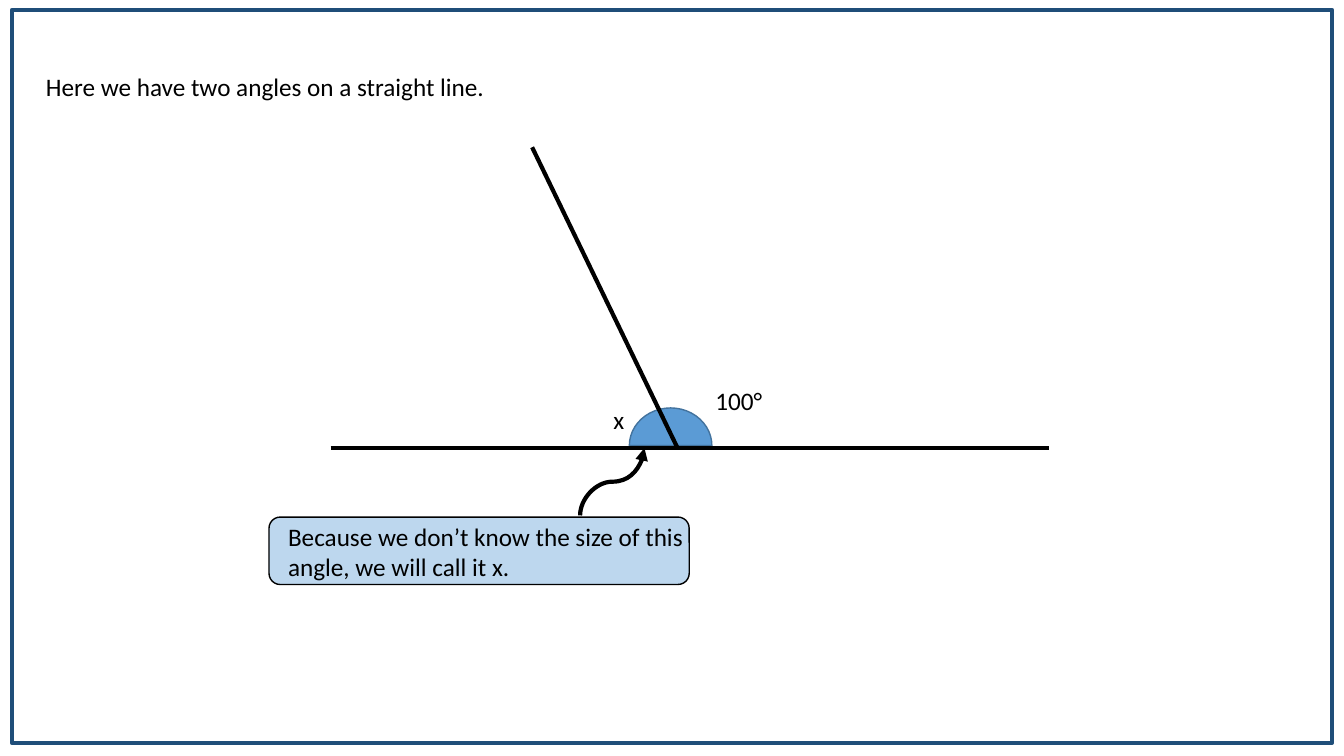
from lxml import etree
from pptx import Presentation
from pptx.dml.color import RGBColor
from pptx.enum.shapes import MSO_CONNECTOR as Link, MSO_SHAPE as Shape
from pptx.oxml.ns import qn
from pptx.util import Cm, Pt


def paint(target, color):
    """Give a fill, or the fill of a line, one solid colour."""
    target.solid()
    target.fore_color.rgb = RGBColor.from_string(color)


def add_label(shapes, text, left, top, width, height, wrap=False):
    box = shapes.add_textbox(Cm(left), Cm(top), Cm(width), Cm(height))
    box.text_frame.word_wrap = wrap
    span = box.text_frame.paragraphs[0].add_run()
    span.text = text
    span.font.name = "Calibri"
    span.font.size = Pt(18)
    paint(span.font.fill, "000000")


deck = Presentation()
deck.slide_width, deck.slide_height = Cm(33.87), Cm(19.05)
page = deck.slides.add_slide(deck.slide_layouts[6])
shapes = page.shapes

# Frame, angle marker and callout box
frame = shapes.add_shape(Shape.RECTANGLE, Cm(0.3), Cm(0.25), Cm(33.27), Cm(18.47))
marker = shapes.add_shape(Shape.PIE, Cm(15.95), Cm(10.19), Cm(1.9), Cm(2.08))
marker.rotation = 90
marker.adjustments[0], marker.adjustments[1] = 54, 162
callout = shapes.add_group_shape()
callout_box = callout.shapes.add_shape(
    Shape.ROUNDED_RECTANGLE, Cm(6.78), Cm(13.03), Cm(10.59), Cm(1.7))
add_label(callout.shapes, "Because we don’t know the size of this angle, we will call it x.",
          7.01, 13, 10.77, 1.8, wrap=True)

for shape, fill, line, weight in [
    (frame, None, "1F4E79", 3),
    (marker, "5B9BD5", "43739E", 1),
    (callout_box, "BDD7EE", "000000", 1),
]:
    shape.shadow.inherit = False
    if fill:
        paint(shape.fill, fill)
    else:
        shape.fill.background()
    paint(shape.line.fill, line)
    shape.line.width = Pt(weight)

# Straight line, slanted ray and curved arrow
vertex_y = 11.28
strokes = []
for kind, x1, y1, x2, y2 in [
    (Link.STRAIGHT, 8.33, vertex_y, 26.44, vertex_y),
    (Link.STRAIGHT, 13.41, 3.71, 17.07, vertex_y),
    (Link.CURVE, 16.28, 12.95, 14.58, 11.33),
]:
    stroke = shapes.add_connector(kind, Cm(x1), Cm(y1), Cm(x2), Cm(y2))
    paint(stroke.line.fill, "000000")
    stroke.line.width = Pt(3)
    etree.SubElement(stroke._element.spPr, qn("a:effectLst"))
    strokes.append(stroke)

# A quarter turn makes the curve leave and arrive vertically
arrow = strokes[-1]
arrow._element.spPr.find(qn("a:xfrm")).set("rot", "5400000")
etree.SubElement(arrow.line._get_or_add_ln(), qn("a:tailEnd"), type="triangle")

add_label(shapes, "Here we have two angles on a straight line.", 0.91, 1.68, 11.68, 1.02)
add_label(shapes, "x", 15.21, 10.06, 0.79, 1.02)
add_label(shapes, "100°", 17.78, 9.58, 1.7, 1.02)

deck.save("out.pptx")
